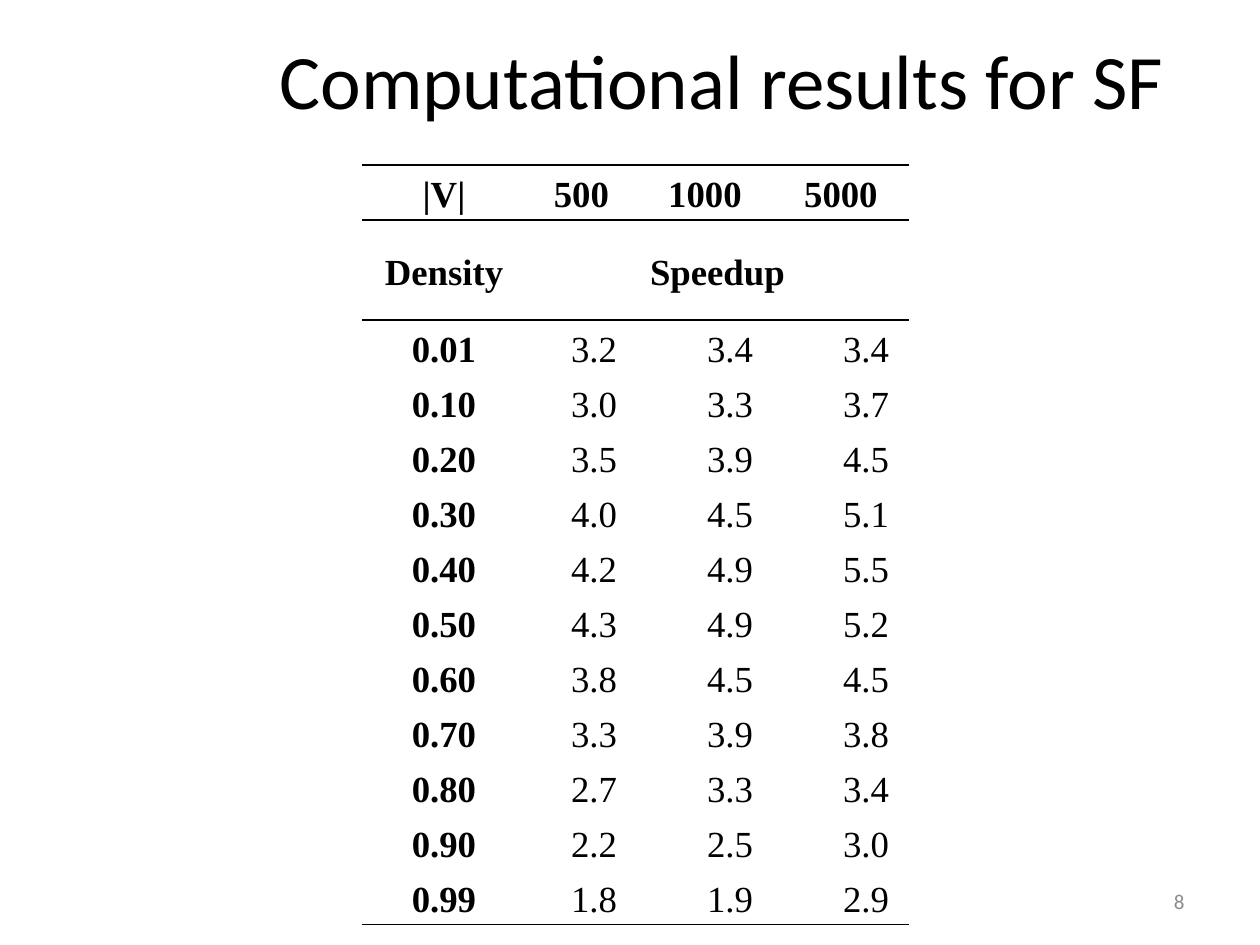
from dataclasses import dataclass
from lxml.etree import SubElement
from pptx import Presentation
from pptx.dml.color import RGBColor
from pptx.enum.text import MSO_ANCHOR, PP_ALIGN
from pptx.oxml.ns import qn
from pptx.util import Emu, Pt


@dataclass(frozen=True)
class Theme:
    ink: str = "000000"
    muted: str = "8C8C8C"
    head_font: str = "Calibri"
    table_font: str = "Times New Roman"
    title_size: int = 44
    table_size: int = 21
    number_size: int = 12
    rule: int = 1


T = Theme()
SPEEDUPS = {
    "0.01": (3.2, 3.4, 3.4),
    "0.10": (3.0, 3.3, 3.7),
    "0.20": (3.5, 3.9, 4.5),
    "0.30": (4.0, 4.5, 5.1),
    "0.40": (4.2, 4.9, 5.5),
    "0.50": (4.3, 4.9, 5.2),
    "0.60": (3.8, 4.5, 4.5),
    "0.70": (3.3, 3.9, 3.8),
    "0.80": (2.7, 3.3, 3.4),
    "0.90": (2.2, 2.5, 3.0),
    "0.99": (1.8, 1.9, 2.9),
}


def px(n):
    return Emu(round(n * 914400 / 126))


def set_attrs(obj, values):
    for name, value in values.items():
        setattr(obj, name, value)


def place(shape, box):
    set_attrs(shape, dict(zip(("left", "top", "width", "height"), map(px, box))))


def write(tf, text, align, color, spacing=None, **font):
    tf.text = text
    p = tf.paragraphs[0]
    set_attrs(p, {"alignment": align, "line_spacing": spacing})
    r = p.runs[0]
    set_attrs(r.font, font)
    r.font.color.rgb = RGBColor.from_string(color)


def add_title(s, box):
    sp = s.shapes.title
    place(sp, box)
    sp.text_frame.vertical_anchor = MSO_ANCHOR.MIDDLE
    write(sp.text_frame, "Computational results for SF", PP_ALIGN.CENTER, T.ink,
          name=T.head_font, size=Pt(T.title_size))


def add_number(s, box):
    tf = s.shapes.add_textbox(*map(px, box)).text_frame
    set_attrs(tf, {"word_wrap": True, "vertical_anchor": MSO_ANCHOR.MIDDLE})
    write(tf, "8", PP_ALIGN.RIGHT, T.muted, name=T.head_font, size=Pt(T.number_size))


def set_borders(cell, ruled):
    tc_pr = cell._tc.get_or_add_tcPr()
    for side in "LRTB":
        ln = SubElement(tc_pr, qn(f"a:ln{side}"), w=str(Pt(T.rule)))
        if side in ruled:
            fill = SubElement(ln, qn("a:solidFill"))
            SubElement(fill, qn("a:srgbClr"), val=T.ink)
        else:
            SubElement(ln, qn("a:noFill"))


def add_results(s, box):
    rows = [("|V|", "500", "1000", "5000"), ("Density", "Speedup", "", "")]
    rows += [(d, *map(str, values)) for d, values in SPEEDUPS.items()]
    last = len(rows) - 1
    widths = (164, 111, 136, 136)
    row_h = 55
    heights = [row_h, box[3] - last * row_h] + [row_h] * (last - 1)
    table = s.shapes.add_table(len(rows), len(widths), *map(px, box)).table
    set_attrs(table, {"first_row": False, "horz_banding": False})
    for column, width in zip(table.columns, widths):
        column.width = px(width)
    for row, height in zip(table.rows, heights):
        row.height = px(height)
    for i, texts in enumerate(rows):
        ruled = ("T" if i <= 2 else "") + ("B" if i <= 1 or i == last else "")
        for j, text in enumerate(texts):
            cell = table.cell(i, j)
            set_borders(cell, ruled)
            cell.fill.background()
            set_attrs(cell, {"margin_left": px(20), "margin_right": px(20),
                             "margin_top": 0, "margin_bottom": 0,
                             "vertical_anchor": MSO_ANCHOR.MIDDLE})
            if text:
                heading = i <= 1 or j == 0
                align = PP_ALIGN.CENTER if heading else PP_ALIGN.RIGHT
                write(cell.text_frame, text, align, T.ink, spacing=1.15,
                      name=T.table_font, size=Pt(T.table_size), bold=heading)
    table.cell(1, 1).merge(table.cell(1, 3))


def main():
    prs = Presentation()
    set_attrs(prs, {"slide_width": px(1260), "slide_height": px(945)})
    s = prs.slides.add_slide(prs.slide_layouts[5])
    add_title(s, (184, 0, 1076, 158))
    add_number(s, (903, 876, 294, 50))
    add_results(s, (362, 165, 547, 760))
    prs.save("out.pptx")


if __name__ == "__main__":
    main()
